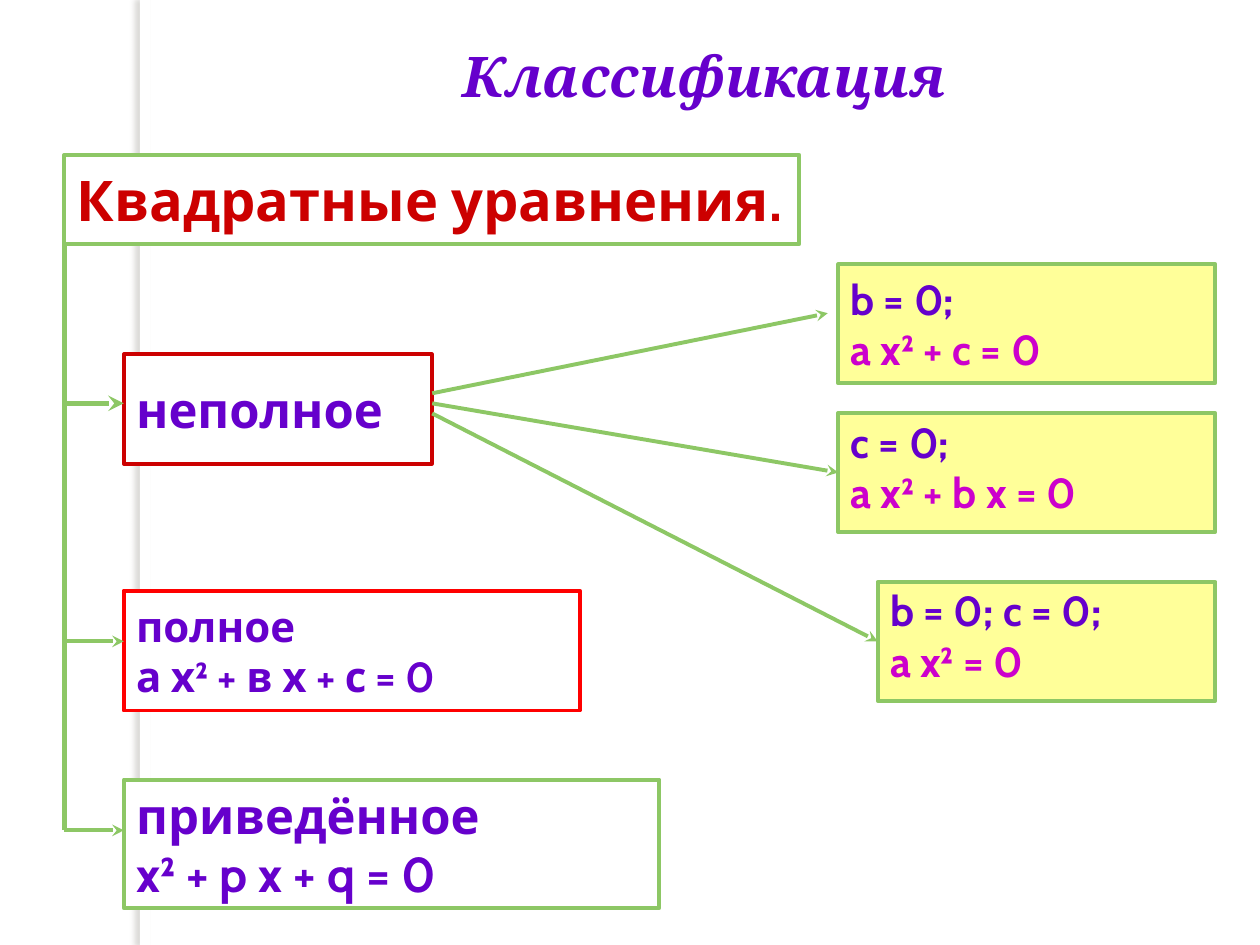
from lxml.etree import SubElement as Sub
from pptx import Presentation
from pptx.dml.color import RGBColor
from pptx.enum.shapes import MSO_CONNECTOR as Link, MSO_SHAPE as Form
from pptx.enum.text import MSO_ANCHOR as Anchor, PP_ALIGN as Align
from pptx.oxml.ns import qn
from pptx.util import Pt

WHITE = RGBColor(0xFF, 0xFF, 0xFF)
GREEN = RGBColor(0x8D, 0xC7, 0x65)
RED = RGBColor(0xFF, 0, 0)
DARK = RGBColor(0xCC, 0, 0)
VIOLET = RGBColor(0x66, 0, 0xCC)
PINK = RGBColor(0xCC, 0, 0xCC)
YELLOW = RGBColor(0xFF, 0xFF, 0x99)


def assign(part, vals):
    """Set each named value on the part."""
    for name, val in vals.items():
        setattr(part, name, val)


def write(frame, lines, size, tints, face="Cabin", **more):
    """Fill the frame with one paragraph per line."""
    for i, (line, tint) in enumerate(zip(lines, tints)):
        para = frame.paragraphs[0] if i == 0 else frame.add_paragraph()
        para.alignment = Align.LEFT
        run = para.add_run()
        run.text = line
        assign(run.font, {"name": face, "size": Pt(size), "bold": True, **more})
        run.font.color.rgb = tint


def panel(slide, box, fill, edge=None):
    """Draw a plain rectangle, outlined when an edge colour is given."""
    shape = slide.shapes.add_shape(Form.RECTANGLE, *map(Pt, box))
    shape.shadow.inherit = False
    shape.fill.solid()
    shape.fill.fore_color.rgb = fill
    if edge is None:
        shape.line.fill.background()
    else:
        shape.line.color.rgb = edge
        shape.line.width = Pt(2.25)
    return shape


def card(slide, box, lines, size, tints, edge=GREEN, fill=WHITE, **pads):
    """Draw an outlined panel with its text centred in height."""
    shape = panel(slide, box, fill, edge)
    frame = shape.text_frame
    assign(frame, {"word_wrap": False, "vertical_anchor": Anchor.MIDDLE, **pads})
    write(frame, lines, size, tints)
    return shape


def wire(slide, start, end, width=2.25, head=True, goal=None):
    """Draw a green line, with an arrowhead and a joined goal if asked."""
    line = slide.shapes.add_connector(Link.STRAIGHT, *map(Pt, (*start, *end)))
    if goal is not None:
        line.end_connect(goal, 1)
    line.line.color.rgb = GREEN
    line.line.width = Pt(width)
    if head:
        Sub(line.line._get_or_add_ln(), qn("a:tailEnd"), type="stealth")
    Sub(line._element.spPr, qn("a:effectLst"))


def band(slide, box):
    """Draw the white strip that casts a soft shadow to the left."""
    shape = panel(slide, box, WHITE)
    glow = shape._element.spPr.find(qn("a:effectLst"))
    cast = Sub(glow, qn("a:outerShdw"), blurRad=str(Pt(3)), dist=str(Pt(3)),
               dir="10800000", algn="tl", rotWithShape="0")
    tint = Sub(cast, qn("a:srgbClr"), val="736F63")
    Sub(tint, qn("a:alpha"), val="25000")


def title(slide, box):
    """Place the heading."""
    frame = slide.shapes.add_textbox(*map(Pt, box)).text_frame
    frame.word_wrap = True
    write(frame, ["Классификация"], 32, [VIOLET], "Cambria", italic=True)


def tree(slide, box):
    """Draw the root card, its three kinds and the trunk joining them."""
    left, top, wide, high = box
    card(slide, (left, top, wide, 51), ["Квадратные уравнения."], 32, [DARK])
    kinds = (
        (114, 176, 62.5, ["неполное"], 28, DARK, 142, 3),
        (249, 260.5, 68.5, ["полное", "а х² + в х + с = 0"], 24, RED, 278, 2.25),
        (357, 306, 73.5, ["приведённое", "x² + p x + q = 0"], 28, GREEN, 386, 2.25),
    )
    for drop, width, tall, lines, size, edge, _, _ in kinds:
        card(slide, (left + 34, top + drop, width, tall), lines, size,
             [VIOLET] * 2, edge)
    wire(slide, (left, top + 51), (left, top + 386), 3, False)
    for *_, arm, width in kinds:
        wire(slide, (left, top + arm), (left + 34, top + arm), width)


def cases(slide, box, root):
    """Draw the yellow cases and the arrows fanning out from the root point."""
    left, top, wide, high = box
    x, y = root
    lift = {"margin_top": Pt(0), "margin_bottom": Pt(7)}
    rows = (
        (0, 0, ["b = 0;", "a x² + c = 0"], {}),
        (0, 85, ["c = 0;", "a x² + b x = 0"], lift),
        (22.5, 181.5, ["b = 0; c = 0;", "a x² = 0"], lift),
    )
    for i, (shift, drop, lines, pads) in enumerate(rows):
        spot = (left + shift, top + drop, wide - shift, 68)
        goal = card(slide, spot, lines, 24, [VIOLET, PINK], fill=YELLOW, **pads)
        tip = (left + shift, top + drop + 34) if i else (left - 6, top + 28)
        wire(slide, (x, y + 5.75 * (i - 1)), tip, goal=goal if i else None)


def main():
    """Build and save the slide."""
    deck = Presentation()
    assign(deck, {"slide_width": Pt(720), "slide_height": Pt(540)})
    slide = deck.slides.add_slide(deck.slide_layouts[6])
    band(slide, (80, 0, 5.75, 540))
    title(slide, (257.5, 20, 330, 45.5))
    tree(slide, (36.75, 88.5, 420, 430.5))
    cases(slide, (479, 151, 215.5, 249.5), (247, 230.5))
    deck.save("out.pptx")


if __name__ == "__main__":
    main()
